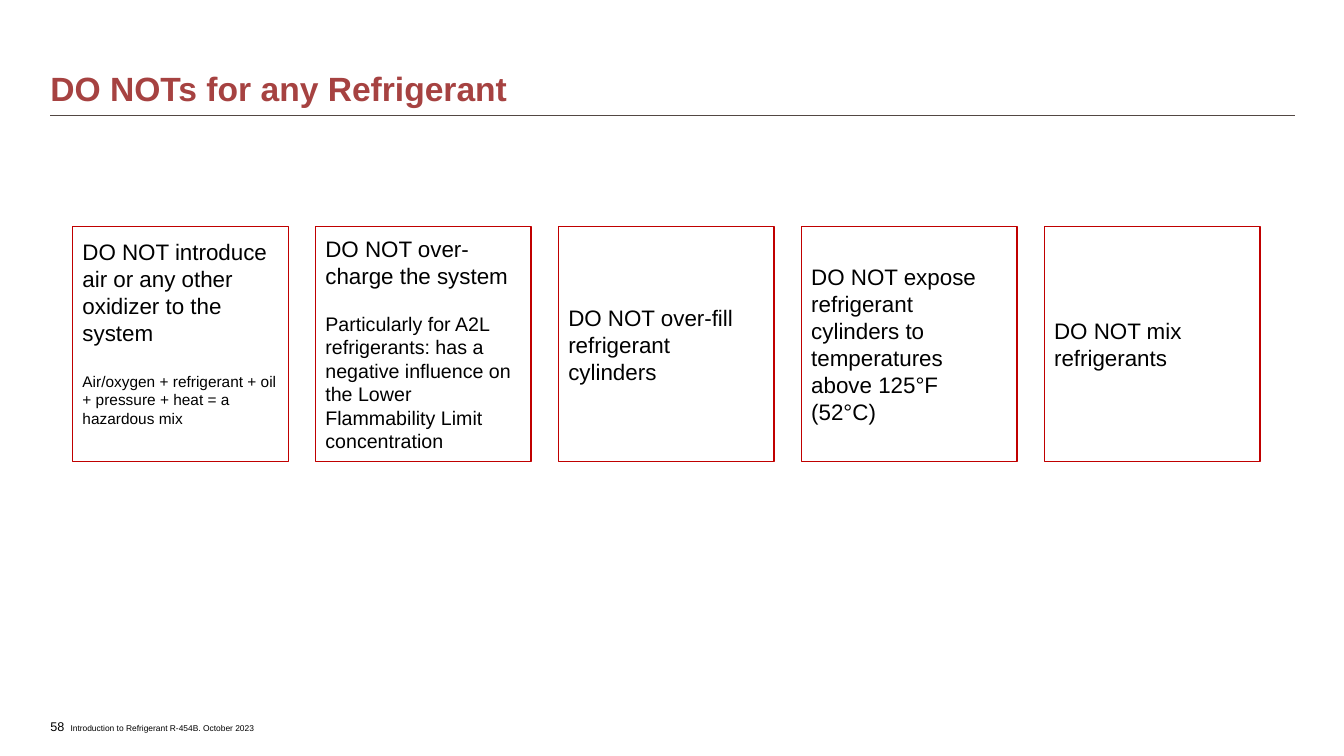
import pptx
import pptx.util
import pptx.dml.color
import pptx.enum.shapes
import pptx.enum.text
import pptx.oxml.ns
import lxml.etree

Pt = pptx.util.Pt
RGBColor = pptx.dml.color.RGBColor
Anchor = pptx.enum.text.MSO_ANCHOR

BLACK = RGBColor(0, 0, 0)
BRICK = RGBColor(0xA6, 0x42, 0x41)
WARNING_RED = RGBColor(0xC0, 0, 0)
RULE_BROWN = RGBColor(0x52, 0x47, 0x43)

WARNINGS = [
    ("DO NOT introduce air or any other oxidizer to the system",
     "Air/oxygen + refrigerant + oil + pressure + heat = a hazardous mix",
     11, 18.4, 19.7),
    ("DO NOT over-charge the system",
     "Particularly for A2L refrigerants: has a negative influence on the "
     "Lower Flammability Limit concentration",
     14, 16.1, 3.6),
    ("DO NOT over-fill refrigerant cylinders",),
    ("DO NOT expose refrigerant cylinders to temperatures above 125°F (52°C)",),
    ("DO NOT mix refrigerants",),
]
CARD_LEFT, CARD_TOP, CARD_STEP = 51.84, 162, 173.52
CARD_WIDTH, CARD_HEIGHT = 154.08, 167.76


class WarningSlide:
    base_font = {"name": "Arial", "size": Pt(16), "bold": False}

    def __init__(self, slide):
        self.slide = slide

    def set_text(self, paragraph, text, color=BLACK, **font_format):
        paragraph.text = text
        paragraph.alignment = pptx.enum.text.PP_ALIGN.LEFT
        for key, value in {**self.base_font, **font_format}.items():
            setattr(paragraph.font, key, value)
        paragraph.font.color.rgb = color

    def frame_format(self, frame, **values):
        for key, value in {"word_wrap": True, **values}.items():
            setattr(frame, key, value)

    def label(self, text, box, anchor=Anchor.TOP, spacing=1.0, **style):
        frame = self.slide.shapes.add_textbox(*map(Pt, box)).text_frame
        self.frame_format(frame, vertical_anchor=anchor, margin_left=0,
                          margin_top=0, margin_right=0, margin_bottom=0)
        self.set_text(frame.paragraphs[0], text, **style)
        frame.paragraphs[0].line_spacing = spacing

    def rule(self, left, right, y):
        rule = self.slide.shapes.add_connector(
            pptx.enum.shapes.MSO_CONNECTOR.STRAIGHT,
            Pt(left), Pt(y), Pt(right), Pt(y))
        rule.line.color.rgb = RULE_BROWN
        rule.line.width = Pt(0.75)
        lxml.etree.SubElement(rule._element.spPr, pptx.oxml.ns.qn("a:effectLst"))

    def card(self, left, warning, reason=None, reason_size=14, gap=0, bottom=3.6):
        card = self.slide.shapes.add_shape(
            pptx.enum.shapes.MSO_SHAPE.RECTANGLE,
            Pt(left), Pt(CARD_TOP), Pt(CARD_WIDTH), Pt(CARD_HEIGHT))
        card.shadow.inherit = False
        card.fill.background()
        card.line.color.rgb = WARNING_RED
        card.line.width = Pt(1)
        frame = card.text_frame
        self.frame_format(frame, vertical_anchor=Anchor.MIDDLE,
                          margin_bottom=Pt(bottom))
        self.set_text(frame.paragraphs[0], warning)
        if reason:
            explanation = frame.add_paragraph()
            self.set_text(explanation, reason, size=Pt(reason_size))
            explanation.space_before = Pt(gap)


def main():
    deck = pptx.Presentation()
    deck.slide_width, deck.slide_height = Pt(960), Pt(540)
    page = WarningSlide(deck.slides.add_slide(deck.slide_layouts[6]))

    page.rule(36, 925.2, 82.8)
    page.label("58", (36, 510.48, 28, 17.28), Anchor.MIDDLE, size=Pt(9))
    page.label("Introduction to Refrigerant R-454B. October 2023",
               (50.4, 516.24, 158.4, 7.2), size=Pt(6))
    page.label("DO NOTs for any Refrigerant", (36, 15.12, 889.2, 62.64),
               Anchor.BOTTOM, 0.9, color=BRICK, size=Pt(24), bold=True)
    for column, warning in enumerate(WARNINGS):
        page.card(CARD_LEFT + column * CARD_STEP, *warning)

    deck.save("out.pptx")


if __name__ == "__main__":
    main()
